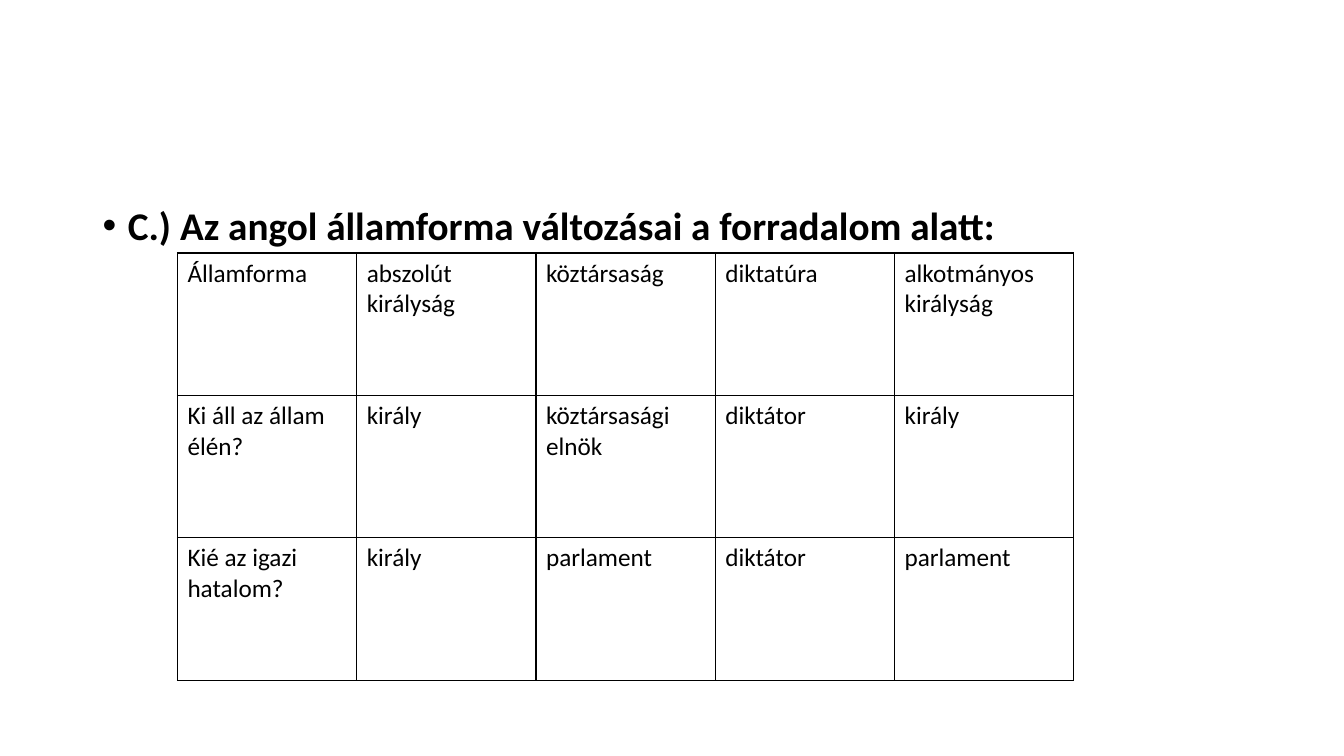
from pptx import Presentation
from pptx.dml.color import RGBColor
from pptx.oxml import parse_xml
from pptx.oxml.ns import nsdecls
from pptx.util import Inches, Pt

BLACK = RGBColor(0, 0, 0)
HEADING = "C.) Az angol államforma változásai a forradalom alatt:"
GOVERNMENT_FORMS = [
    ["Államforma", "abszolút királyság", "köztársaság", "diktatúra", "alkotmányos királyság"],
    ["Ki áll az állam élén?", "király", "köztársasági elnök", "diktátor", "király"],
    ["Kié az igazi hatalom?", "király", "parlament", "diktátor", "parlament"],
]


def write(frame, text, size=18, bold=False, color=BLACK, font="Calibri"):
    """Put formatted text into a frame and return its paragraph."""
    paragraph = frame.paragraphs[0]
    run = paragraph.add_run()
    run.text = text
    run.font.name = font
    run.font.size = Pt(size)
    run.font.bold = bold
    run.font.color.rgb = color
    return paragraph


class SlideBuilder:
    """Hold the slide and its line style, and add elements to it."""

    def __init__(self, slide, line_color=BLACK, line_width=1):
        self.slide = slide
        self.line_color = line_color
        self.line_width = line_width

    def bullet(self, text, left, top, width, height):
        """Add a text box with one bold bulleted line."""
        box = self.slide.shapes.add_textbox(
            Inches(left), Inches(top), Inches(width), Inches(height))
        box.text_frame.word_wrap = True
        paragraph = write(box.text_frame, text, size=28, bold=True)
        paragraph.line_spacing = 0.9
        paragraph.space_before = Pt(10)
        properties = paragraph._p.get_or_add_pPr()
        properties.set("marL", str(Inches(0.25)))
        properties.set("indent", str(Inches(-0.25)))
        for tag in ('buFont {} typeface="Arial"', 'buChar {} char="•"'):
            properties.append(parse_xml(f"<a:{tag.format(nsdecls('a'))}/>"))

    def border(self, cell):
        """Draw a solid line on each side of a cell."""
        properties = cell._tc.get_or_add_tcPr()
        for position, side in enumerate(("lnL", "lnR", "lnT", "lnB")):
            properties.insert(position, parse_xml(
                f'<a:{side} {nsdecls("a")} w="{Pt(self.line_width)}"><a:solidFill>'
                f'<a:srgbClr val="{self.line_color}"/></a:solidFill></a:{side}>'))

    def table(self, rows, left, top, width, height):
        """Add an evenly divided table with unfilled, bordered cells."""
        table = self.slide.shapes.add_table(
            len(rows), len(rows[0]), Inches(left), Inches(top),
            Inches(width), Inches(height)).table
        table.first_row = False
        table.horz_banding = False
        for cell, text in zip(table.iter_cells(), sum(rows, [])):
            cell.fill.background()
            self.border(cell)
            write(cell.text_frame, text)


def main():
    """Build and save the slide."""
    deck = Presentation()
    deck.slide_width, deck.slide_height = Inches(13.33), Inches(7.5)
    builder = SlideBuilder(deck.slides.add_slide(deck.slide_layouts[6]))
    builder.bullet(HEADING, 0.92, 2, 11.5, 4.76)
    builder.table(GOVERNMENT_FORMS, 1.76, 2.51, 8.89, 4.24)
    deck.save("out.pptx")


if __name__ == "__main__":
    main()
